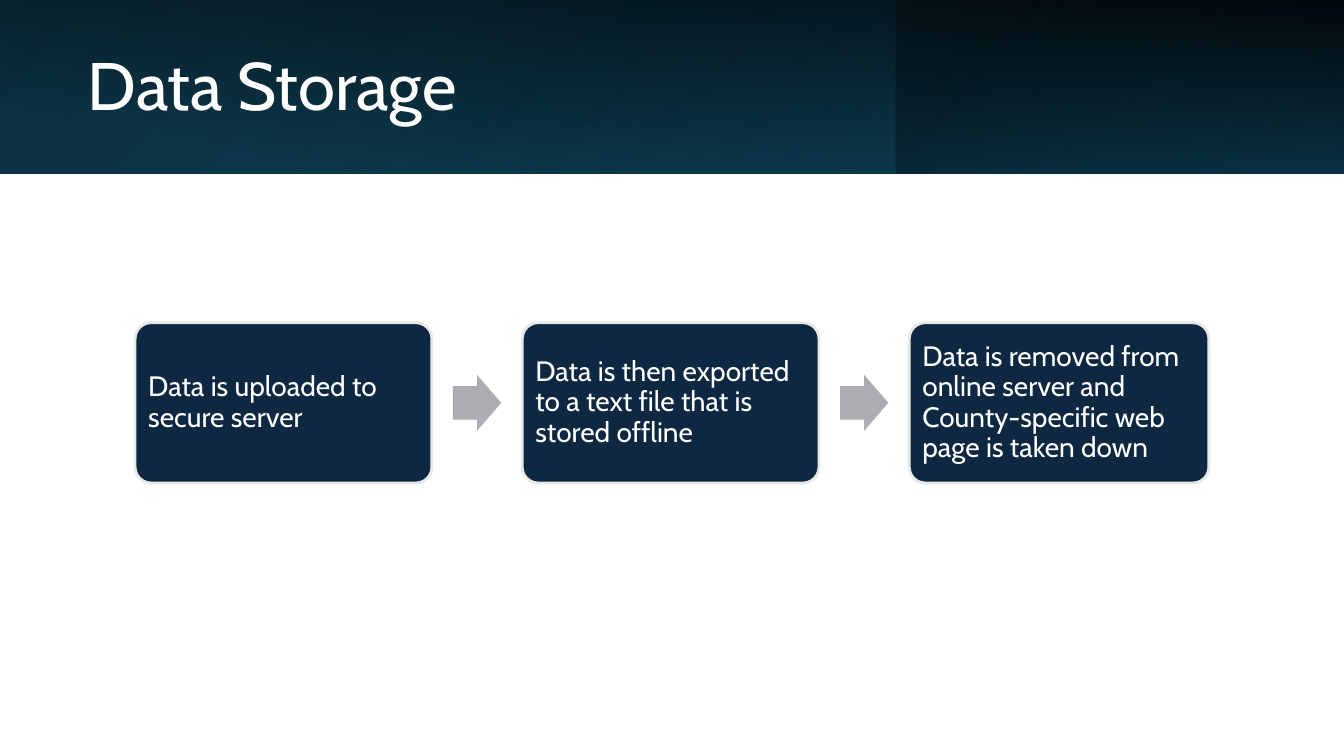
from lxml import etree
from pptx import Presentation
from pptx.dml.color import RGBColor
from pptx.enum import shapes, text
from pptx.oxml.ns import qn
from pptx.util import Pt

TITLE = "Data Storage"
STEPS = [
    "Data is uploaded to secure server",
    "Data is then exported to a text file that is stored offline",
    "Data is removed from online server and County-specific web page is taken down",
]
COLORS = {
    "white": "FFFFFF", "navy": "0E2841", "edge": "E8E8E8", "arrow": "ABADB0",
    "deep": "0B3041", "mid": "104862", "teal": "156082", "black": "000000",
}
FONT = "Cabin"
WIDE, HIGH, BAND = 960, 540, 124
SPLIT = 640
# box, rotation, mirrored, angle, stops of (position, colour, opacity)
LAYERS = [
    ((0, 0, WIDE, BAND), 0, True, 140, [(0, "deep", 100), (100, "mid", 100)]),
    ((SPLIT, 0, WIDE - SPLIT, BAND), 180, True, 320,
     [(19, "deep", 68), (100, "teal", 79)]),
    (((WIDE - BAND) / 2, (BAND - WIDE) / 2, BAND, WIDE), 90, False, 190,
     [(16, "black", 0), (99, "black", 87)]),
    ((301, 0, SPLIT - 301, BAND), 0, False, 240,
     [(0, "teal", 17), (74, "deep", 0)]),
]
LEFT, TOP, STEP = 96.5, 230.5, 276.5
BOX_W, BOX_H = 212, 114.5
ARROW_W, ARROW_H = 34.5, 40
KIND = shapes.MSO_SHAPE


def color(name):
    return RGBColor.from_string(COLORS[name])


def add_shape(kind, box, fill=None):
    shape = slide.shapes.add_shape(kind, *[Pt(n) for n in box])
    shape.shadow.inherit = False
    shape.line.fill.background()
    if fill:
        shape.fill.solid()
        shape.fill.fore_color.rgb = color(fill)
    return shape


def shade(shape, angle, stops):
    """Give the shape a linear gradient with an opacity at each stop."""
    shape.fill.gradient()
    shape.fill.gradient_angle = 0
    props = shape.element.spPr
    props.find(".//" + qn("a:lin")).set("ang", str(angle * 60000))
    ramp = props.find(".//" + qn("a:gsLst"))
    for old in list(ramp):
        ramp.remove(old)
    for pos, name, alpha in stops:
        stop = etree.SubElement(ramp, qn("a:gs"), pos=str(pos * 1000))
        tint = etree.SubElement(stop, qn("a:srgbClr"), val=COLORS[name])
        if alpha < 100:
            etree.SubElement(tint, qn("a:alpha"), val=str(alpha * 1000))


def write(shape, words, size, inset):
    frame = shape.text_frame
    frame.text = words
    frame.word_wrap = True
    frame.auto_size = text.MSO_AUTO_SIZE.NONE
    frame.vertical_anchor = text.MSO_ANCHOR.MIDDLE
    frame.margin_left = frame.margin_right = Pt(inset)
    para = frame.paragraphs[0]
    para.alignment = text.PP_ALIGN.LEFT
    para.line_spacing = 0.9
    para.font.size = Pt(size)
    para.font.name = FONT
    para.font.color.rgb = color("white")


deck = Presentation()
deck.slide_width, deck.slide_height = Pt(WIDE), Pt(HIGH)
slide = deck.slides.add_slide(deck.slide_layouts[5])

title = slide.shapes.title
title.left, title.top, title.width, title.height = Pt(55.5), Pt(28), Pt(559), Pt(70.5)
write(title, TITLE, 48, 7.2)

for box, turn, mirror, angle, stops in LAYERS:
    layer = add_shape(KIND.RECTANGLE, box)
    layer.rotation = turn
    if mirror:
        layer.element.spPr.find(qn("a:xfrm")).set("flipH", "1")
    shade(layer, angle, stops)
    title.element.addprevious(layer.element)

gap = (STEP - BOX_W - ARROW_W) / 2
for i, words in enumerate(STEPS):
    x = LEFT + i * STEP
    last = i == len(STEPS) - 1
    card = add_shape(KIND.ROUNDED_RECTANGLE,
                     (x, TOP, BOX_W + 2 * last, BOX_H), "navy")
    card.adjustments[0] = 0.1
    card.line.color.rgb = color("edge")
    card.line.width = Pt(2)
    write(card, words, 20, 6)
    if not last:
        arrow = add_shape(
            KIND.RIGHT_ARROW,
            (x + BOX_W + gap, TOP + (BOX_H - ARROW_H) / 2, ARROW_W, ARROW_H),
            "arrow")
        arrow.adjustments[0] = 0.6
        arrow.adjustments[1] = 0.5

deck.save("out.pptx")
